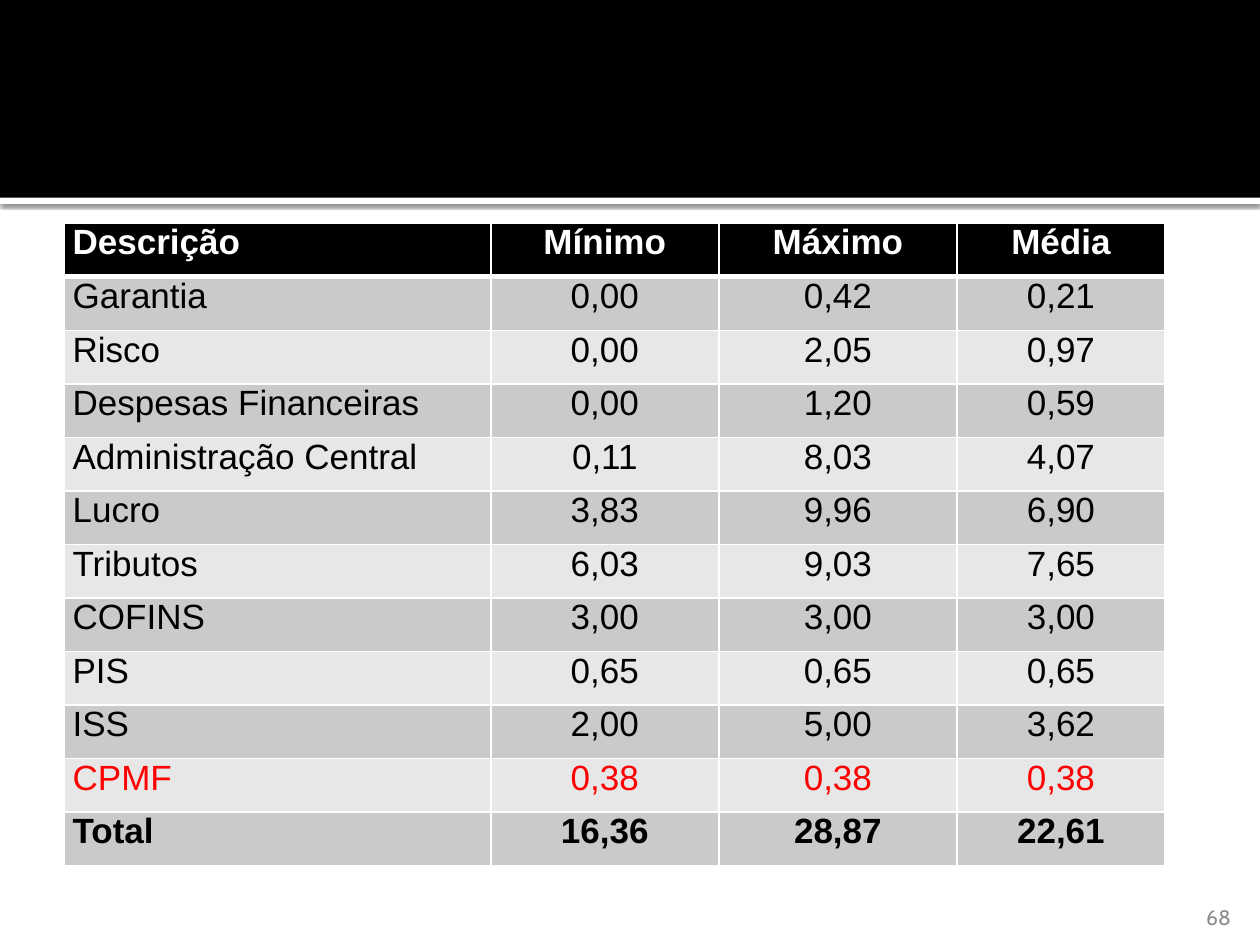
from lxml.etree import SubElement
from pptx import Presentation
from pptx.dml.color import RGBColor
from pptx.enum.shapes import MSO_SHAPE
from pptx.enum.text import MSO_ANCHOR, PP_ALIGN
from pptx.oxml.ns import qn
from pptx.util import Pt

WHITE, BLACK, RED = "FFFFFF", "000000", "FF0000"
BANDS = ("CACACA", "E7E7E7")
COL_WIDTHS = (244, 130.3, 136.1, 118.8)
ROW_HEIGHT = 30.6
ROWS = (
    ("Descrição", "Mínimo", "Máximo", "Média"),
    ("Garantia", "0,00", "0,42", "0,21"),
    ("Risco", "0,00", "2,05", "0,97"),
    ("Despesas Financeiras", "0,00", "1,20", "0,59"),
    ("Administração Central", "0,11", "8,03", "4,07"),
    ("Lucro", "3,83", "9,96", "6,90"),
    ("Tributos", "6,03", "9,03", "7,65"),
    ("COFINS", "3,00", "3,00", "3,00"),
    ("PIS", "0,65", "0,65", "0,65"),
    ("ISS", "2,00", "5,00", "3,62"),
    ("CPMF", "0,38", "0,38", "0,38"),
    ("Total", "16,36", "28,87", "22,61"),
)


def paint(fill, color):
    fill.solid()
    fill.fore_color.rgb = RGBColor.from_string(color)


def format_text(p, font, size, color, align, bold=False):
    p.alignment = align
    for r in p.runs:
        r.font.name, r.font.size, r.font.bold = font, Pt(size), bold
        r.font.color.rgb = RGBColor.from_string(color)


def add_band(slide, top, height, color):
    sp = slide.shapes.add_shape(MSO_SHAPE.RECTANGLE, 0, Pt(top), Pt(720), Pt(height))
    sp.shadow.inherit = False
    paint(sp.fill, color)
    sp.line.fill.background()
    return sp


def add_shadow(sp):
    effects = sp._element.spPr.find(qn("a:effectLst"))
    shadow = SubElement(effects, qn("a:outerShdw"), blurRad=str(Pt(2.5)),
                        dist=str(Pt(0.8)), dir="5400000", algn="tl", rotWithShape="0")
    clr = SubElement(shadow, qn("a:srgbClr"), val=BLACK)
    SubElement(clr, qn("a:alpha"), val="60000")


def set_borders(cell, top, bottom):
    tc_pr = cell._tc.get_or_add_tcPr()
    for side, width in (("L", 1), ("R", 1), ("T", top), ("B", bottom)):
        ln = SubElement(tc_pr, qn(f"a:ln{side}"), w=str(Pt(width)))
        SubElement(SubElement(ln, qn("a:solidFill")), qn("a:srgbClr"), val=WHITE)


def fill_cell(cell, text, i, j):
    header, total = i == 0, i == len(ROWS) - 1
    cell.margin_left = Pt(5 if j == 0 else 0)
    cell.margin_right = cell.margin_top = cell.margin_bottom = 0
    set_borders(cell, top=3 if i == 1 else 1, bottom=3 if header else 1)
    paint(cell.fill, BLACK if header else BANDS[(i - 1) % 2])
    p = cell.text_frame.paragraphs[0]
    p.text = text
    p.space_before = Pt(0.3)
    color = WHITE if header else RED if ROWS[i][0] == "CPMF" else BLACK
    align = PP_ALIGN.LEFT if j == 0 else PP_ALIGN.CENTER
    format_text(p, "Arial", 20, color, align, bold=header or total)


def add_rates_table(slide):
    frame = slide.shapes.add_table(len(ROWS), len(COL_WIDTHS), Pt(36.5), Pt(127.6),
                                   Pt(sum(COL_WIDTHS)), Pt(ROW_HEIGHT * len(ROWS)))
    table = frame.table
    for column, width in zip(table.columns, COL_WIDTHS):
        column.width = Pt(width)
    for i, values in enumerate(ROWS):
        table.rows[i].height = Pt(ROW_HEIGHT)
        for j, text in enumerate(values):
            fill_cell(table.cell(i, j), text, i, j)


def add_page_number(slide, text):
    tf = slide.shapes.add_textbox(Pt(645.8), Pt(509.8), Pt(57.6), Pt(21.6)).text_frame
    tf.word_wrap = True
    tf.vertical_anchor = MSO_ANCHOR.BOTTOM
    tf.margin_left = tf.margin_right = tf.margin_top = tf.margin_bottom = 0
    p = tf.paragraphs[0]
    p.text = text
    p.line_spacing = Pt(15.1)
    format_text(p, "Cabin", 12, "8C8C8C", PP_ALIGN.RIGHT)


def main():
    prs = Presentation()
    prs.slide_width, prs.slide_height = Pt(720), Pt(540)
    slide = prs.slides.add_slide(prs.slide_layouts[6])

    # Header band with a shadowed white rule below it
    add_shadow(add_band(slide, 113, 3.6, WHITE))
    add_band(slide, 0, 113, BLACK)

    # Page number and table
    add_page_number(slide, "68")
    add_rates_table(slide)

    prs.save("out.pptx")


if __name__ == "__main__":
    main()
